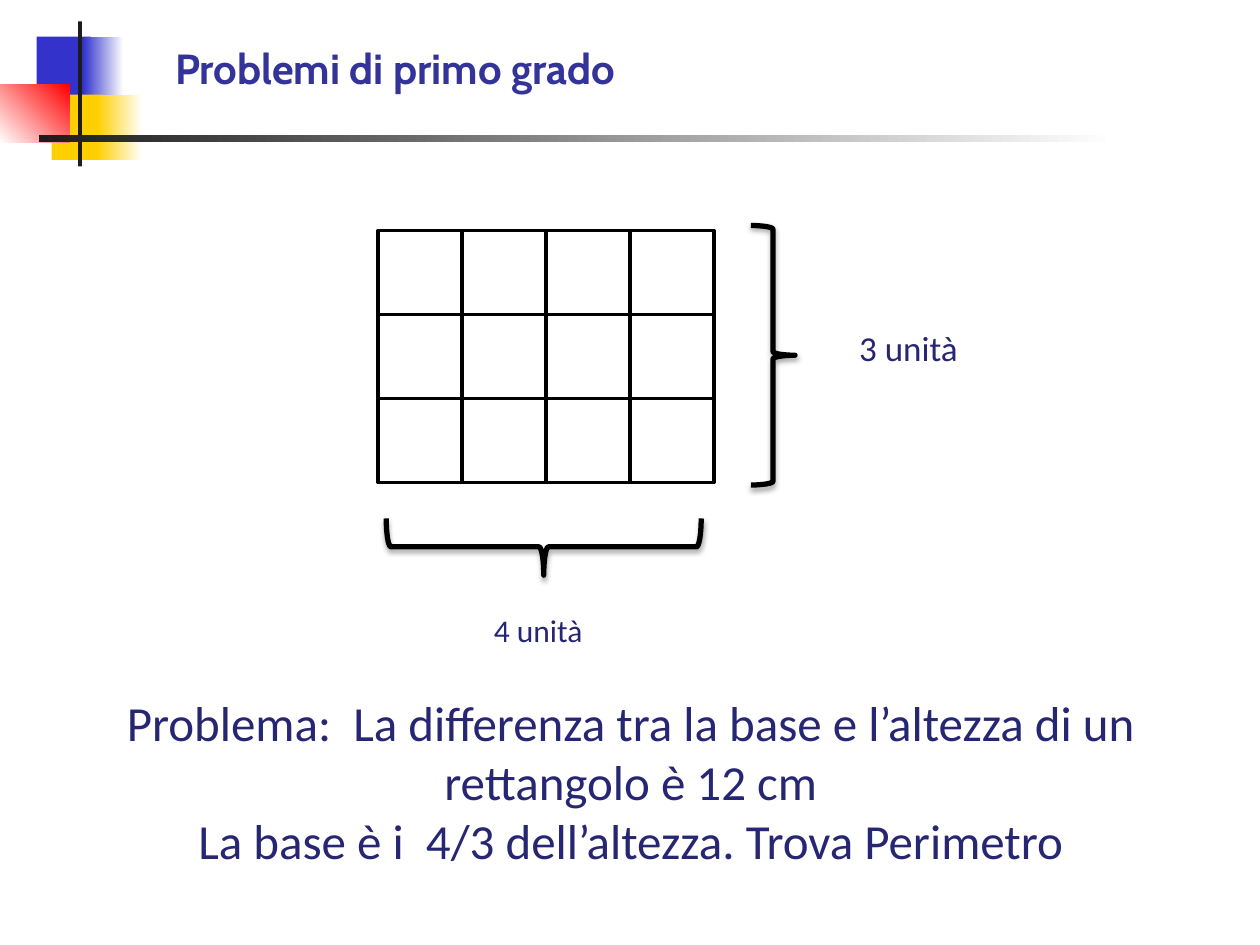
"""Builds a slide that poses a rectangle problem with a grid of unit squares."""
from lxml.etree import SubElement
from pptx import Presentation
from pptx.dml.color import RGBColor
from pptx.enum.shapes import MSO_SHAPE as Shape
from pptx.enum.text import MSO_ANCHOR as Anchor, PP_ALIGN as Align
from pptx.oxml.ns import qn
from pptx.util import Inches, Pt

TITLE = "Problemi di primo grado"
NAVY, BLACK, WHITE = "262673", "000000", "FFFFFF"
ROWS, COLS, SIDE = 3, 4, 2 / 3
GRID = (3, 1.83)

DECOR = [
    ((0.29, 0.29, 0.43, 0.52), ["3333CC"], 0),
    ((0.66, 0.29, 0.32, 0.52), ["3333CC", WHITE], 0),
    ((0.41, 0.75, 0.41, 0.52), ["FFCF01"], 0),
    ((0.77, 0.75, 0.36, 0.52), ["FFCF01", WHITE], 0),
    ((0, 0.67, 0.55, 0.46), [WHITE, "FF0000"], 45),
    ((0.62, 0.17, 0.03, 1.15), ["1C1C1C"], 0),
    ((0.31, 1.07, 8.54, 0.06), ["1C1C1C", WHITE], 0),
]
BRACES = [((4.09, 3.09, 0.45, 2.5), 90), ((5.96, 1.79, 0.35, 2.06), 0)]
TEXTS = [
    ((0.84, 5.45, 8.33, 1.99), 28, Align.CENTER, 0.1, [
        "Problema:  La differenza tra la base e l’altezza di un rettangolo è 12 cm",
        "La base è i  4/3 dell’altezza. Trova Perimetro",
    ]),
    ((3.65, 4.8, 1.93, 0.4), 18, Align.LEFT, 0.27, ["4 unità"]),
    ((6.72, 2.54, 2.28, 0.44), 20, Align.LEFT, 0.1, ["3 unità"]),
]


def rgb(code):
    """Turn a hex string into a colour."""
    return RGBColor.from_string(code)


def put(shape, **values):
    """Set each given attribute on an object."""
    for name, value in values.items():
        setattr(shape, name, value)


def add(home, kind, box, line=0):
    """Add a preset shape with a black outline or none."""
    shape = home.add_shape(kind, *map(Inches, box))
    shape.shadow.inherit = False
    if line:
        shape.line.color.rgb = rgb(BLACK)
        shape.line.width = Pt(line)
    else:
        shape.line.fill.background()
    return shape


def paint(shape, colors, angle=0):
    """Fill a shape with one colour or a two-colour gradient."""
    fill = shape.fill
    if len(colors) == 1:
        fill.solid()
        fill.fore_color.rgb = rgb(colors[0])
        return
    fill.gradient()
    fill.gradient_angle = angle
    for stop, color, place in zip(fill.gradient_stops, colors, (0, 1)):
        stop.color.rgb = rgb(color)
        stop.position = place


def shade(shape):
    """Give a shape a soft shadow below it."""
    effects = shape.element.spPr.find(qn("a:effectLst"))
    outer = SubElement(effects, qn("a:outerShdw"), blurRad=str(Pt(3.1)),
                       dist=str(Pt(1.8)), dir="5400000", rotWithShape="0")
    color = SubElement(outer, qn("a:srgbClr"), val=BLACK)
    SubElement(color, qn("a:alpha"), val="35000")


def write(shape, lines, size, align, left=0.1, face="Calibri", color=NAVY, bold=False):
    """Write formatted paragraphs into a shape."""
    frame = shape.text_frame
    put(frame, word_wrap=True, vertical_anchor=Anchor.TOP, margin_left=Inches(left))
    frame.text = "\n".join(lines)
    for para in frame.paragraphs:
        para.alignment = align
        font = para.runs[0].font
        put(font, size=Pt(size), name=face, bold=bold)
        font.color.rgb = rgb(color)


def main():
    """Build and save the slide."""
    deck = Presentation()
    put(deck, slide_width=Inches(10), slide_height=Inches(7.5))
    slide = deck.slides.add_slide(deck.slide_layouts[5])
    shapes = slide.shapes

    for box, turn in BRACES:
        brace = add(shapes, Shape.RIGHT_BRACE, box, 3)
        brace.rotation = turn
        brace.fill.background()
        shade(brace)

    for box, size, align, left, lines in TEXTS:
        write(shapes.add_textbox(*map(Inches, box)), lines, size, align, left)

    for row in range(ROWS):
        for col in range(COLS):
            spot = (GRID[0] + col * SIDE, GRID[1] + row * SIDE, SIDE, SIDE)
            paint(add(shapes, Shape.RECTANGLE, spot, 2), [WHITE])

    decor = shapes.add_group_shape().shapes
    for box, colors, angle in DECOR:
        paint(add(decor, Shape.RECTANGLE, box), colors, angle)

    title = shapes.title
    put(title, left=Inches(1.29), top=Inches(0.29), width=Inches(6.84), height=Inches(0.91))
    write(title, [TITLE], 24, Align.LEFT, face="Cabin", color="333399", bold=True)
    deck.save("out.pptx")


if __name__ == "__main__":
    main()
